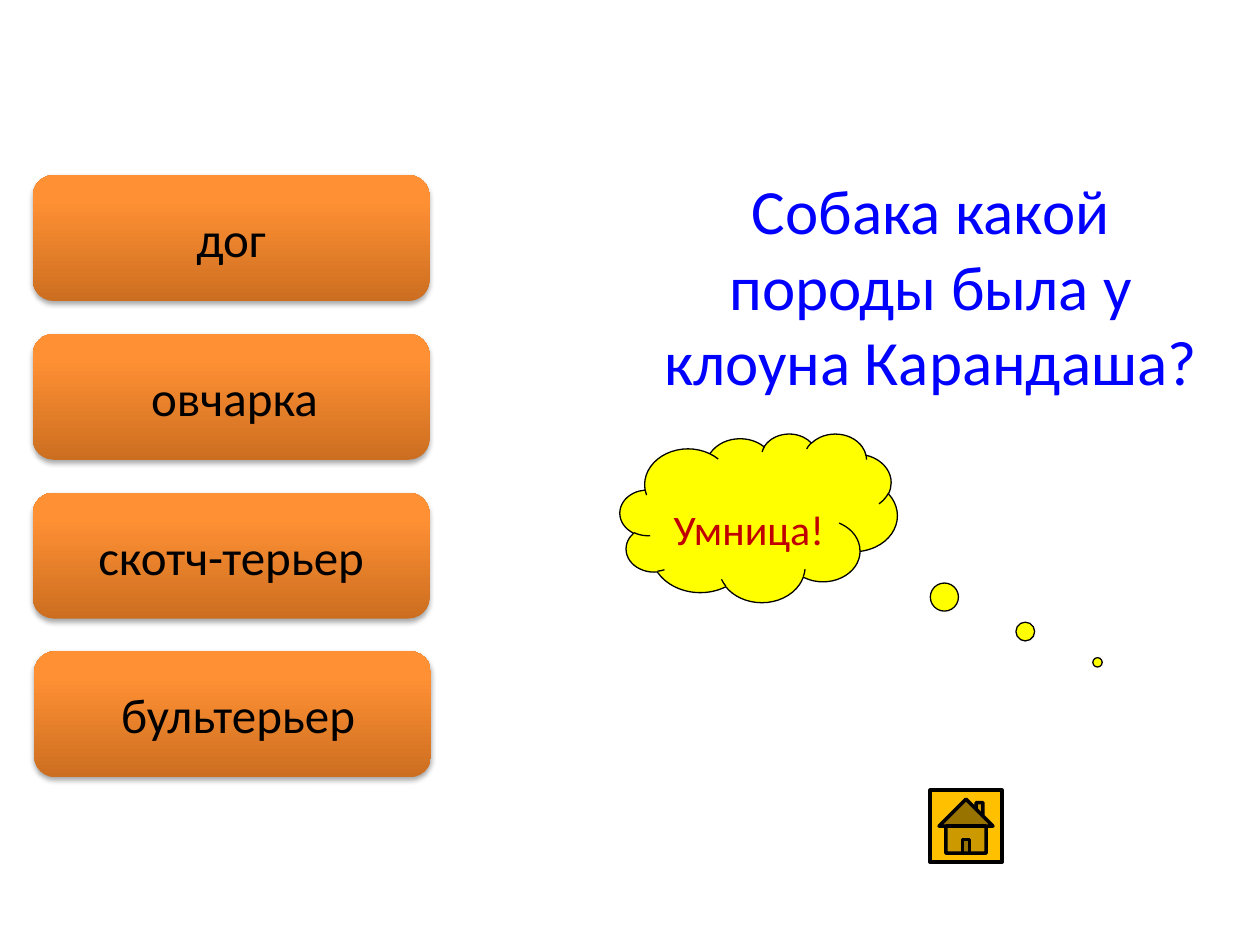
from copy import deepcopy
from dataclasses import dataclass

from lxml import etree
from pptx import Presentation
from pptx import util as u
from pptx.dml.color import RGBColor
from pptx.enum import shapes, text
from pptx.oxml.ns import qn

COLORS = {
    "question": "0000FF",
    "black": "000000",
    "cloud": "FFFF00",
    "praise": "C00000",
    "home": "FFC000",
}
ANSWER_GRADIENT = [(0, "CC6E20"), (0.8, "FF9034"), (1, "FF9136")]
FONT = "Calibri"
ANSWER_TOP, ANSWER_STEP = 3.53, 3.2


@dataclass
class Answer:
    wording: str
    left: float = 0.66
    indent: float = 0


ANSWERS = [
    Answer("дог"),
    Answer("овчарка", indent=0.14),
    Answer("скотч-терьер"),
    Answer("бультерьер", left=0.69, indent=0.22),
]


def write(shape, wording: str, size: int, color: str) -> None:
    frame = shape.text_frame
    frame.word_wrap = True
    frame.text = wording
    paragraph = frame.paragraphs[0]
    paragraph.alignment = text.PP_ALIGN.CENTER
    font = paragraph.runs[0].font
    font.name, font.size = FONT, u.Pt(size)
    font.color.rgb = RGBColor.from_string(COLORS[color])


def add_outlined(slide, kind, box: tuple, fill: str, width: float):
    shape = slide.shapes.add_shape(kind, *map(u.Cm, box))
    shape.shadow.inherit = False
    shape.fill.solid()
    shape.fill.fore_color.rgb = RGBColor.from_string(COLORS[fill])
    shape.line.color.rgb = RGBColor.from_string(COLORS["black"])
    shape.line.width = u.Pt(width)
    return shape


def add_gradient(shape) -> None:
    shape.fill.gradient()
    shape.fill.gradient_angle = 90
    stop_list = shape._element.spPr.find(".//" + qn("a:gsLst"))
    stop_list.append(deepcopy(stop_list[-1]))
    for stop, (position, color) in zip(shape.fill.gradient_stops, ANSWER_GRADIENT):
        stop.position = position
        stop.color.rgb = RGBColor.from_string(color)


def add_soft_shadow(shape) -> None:
    shape.shadow.inherit = False
    effects = shape._element.spPr.find(qn("a:effectLst"))
    shadow = etree.SubElement(
        effects, qn("a:outerShdw"), blurRad=str(u.Pt(3.1)), dist=str(u.Pt(1.8)),
        dir="5400000", rotWithShape="0")
    color = etree.SubElement(shadow, qn("a:srgbClr"), val=COLORS["black"])
    etree.SubElement(color, qn("a:alpha"), val="35000")


def add_answer(slide, answer: Answer, top: float) -> None:
    button = slide.shapes.add_shape(
        shapes.MSO_SHAPE.ROUNDED_RECTANGLE,
        u.Cm(answer.left), u.Cm(top), u.Cm(8), u.Cm(2.54))
    button.line.fill.background()
    add_gradient(button)
    add_soft_shadow(button)
    write(button, answer.wording, 28, "black")
    button.text_frame.vertical_anchor = text.MSO_ANCHOR.MIDDLE
    button.text_frame.margin_left = u.Cm(0.25 + answer.indent)


def main() -> None:
    prs = Presentation()
    prs.slide_width, prs.slide_height = u.Cm(25.4), u.Cm(19.05)
    slide = prs.slides.add_slide(prs.slide_layouts[5])

    # Question
    question = slide.shapes.title
    question.left, question.top = u.Cm(13.06), u.Cm(3.33)
    question.width, question.height = u.Cm(11.4), u.Cm(4.88)
    write(question, "Собака какой породы была у клоуна Карандаша?", 36, "question")
    question.text_frame.vertical_anchor = text.MSO_ANCHOR.TOP
    question.text_frame.auto_size = text.MSO_AUTO_SIZE.SHAPE_TO_FIT_TEXT

    # Praise cloud
    praise = add_outlined(slide, shapes.MSO_SHAPE.CLOUD_CALLOUT,
                          (12.5, 8.74, 5.59, 3.4), "cloud", 0.75)
    praise.adjustments[0], praise.adjustments[1] = 1.222, 0.857
    write(praise, "Умница!", 24, "praise")
    praise.text_frame.vertical_anchor = text.MSO_ANCHOR.TOP
    praise.text_frame.margin_top = u.Cm(0.9)

    # Answer buttons
    for row, answer in enumerate(ANSWERS):
        add_answer(slide, answer, ANSWER_TOP + row * ANSWER_STEP)

    # Home button
    add_outlined(slide, shapes.MSO_SHAPE.ACTION_BUTTON_HOME,
                 (18.75, 15.93, 1.45, 1.45), "home", 2)

    prs.save("out.pptx")


if __name__ == "__main__":
    main()
